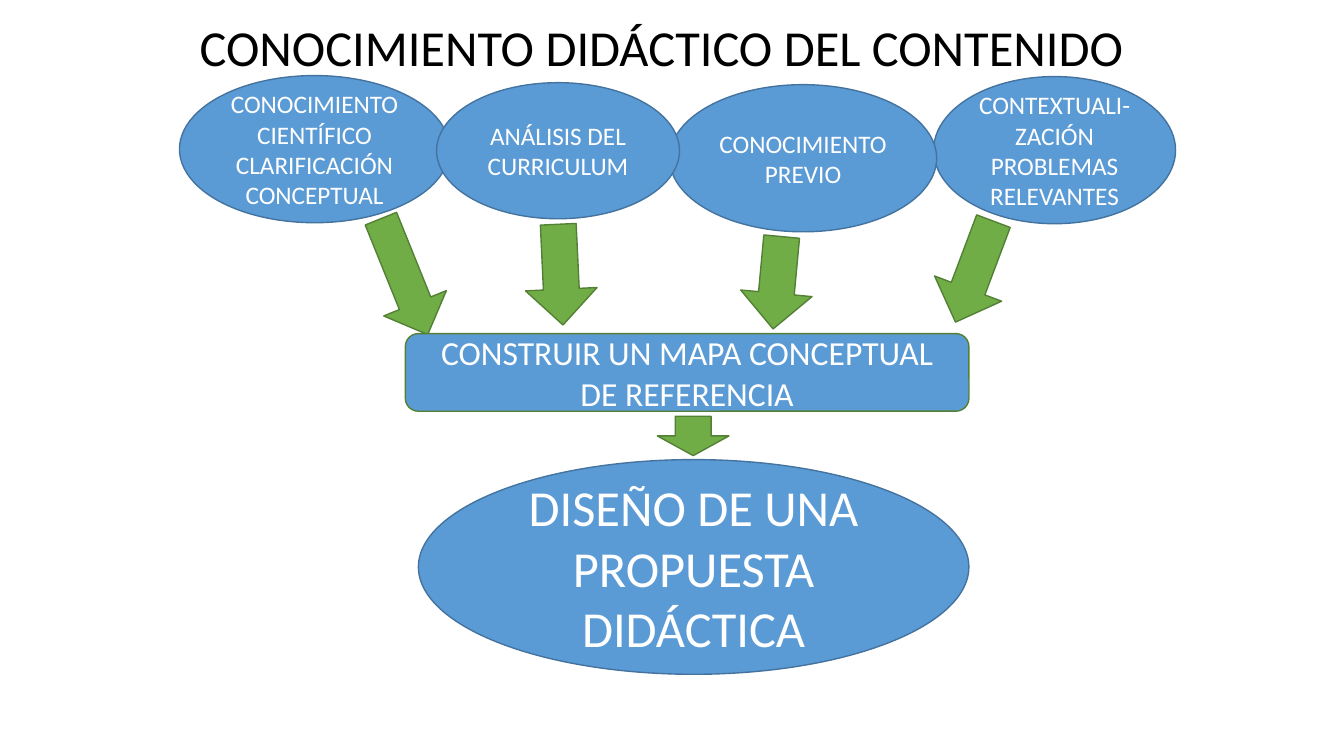
import pptx
import pptx.util
import pptx.dml.color
import pptx.enum.shapes
import pptx.enum.text

PX = 9144  # 100 px to the inch
FONT = "Calibri"
HUES = {
    "blue": "5B9BD5", "navy": "43739E",
    "green": "70AD47", "moss": "538035",
    "white": "FFFFFF", "black": "000000",
}
KINDS = pptx.enum.shapes.MSO_SHAPE
ALIGN = pptx.enum.text.PP_ALIGN
MIDDLE = pptx.enum.text.MSO_ANCHOR.MIDDLE


class Board:
    def __init__(self, deck):
        # Layout with a title only
        self.slide = deck.slides.add_slide(deck.slide_layouts[5])

    def hue(self, name):
        return pptx.dml.color.RGBColor.from_string(HUES[name])

    def label(self, shape, lines, size, hue, align):
        frame = shape.text_frame
        frame.word_wrap = True
        frame.auto_size = pptx.enum.text.MSO_AUTO_SIZE.NONE
        frame.vertical_anchor = MIDDLE
        for i, line in enumerate(lines):
            para = frame.add_paragraph() if i else frame.paragraphs[0]
            para.alignment = align
            run = para.add_run()
            run.text = line
            run.font.name = FONT
            run.font.size = pptx.util.Pt(size)
            run.font.color.rgb = self.hue(hue)

    def title(self, box, text, size):
        shape = self.slide.shapes.title
        shape.left, shape.top, shape.width, shape.height = (n * PX for n in box)
        self.label(shape, [text], size, "black", ALIGN.LEFT)
        shape.text_frame.paragraphs[0].line_spacing = 0.9

    def form(self, kind, box, fill, edge):
        shape = self.slide.shapes.add_shape(kind, *(n * PX for n in box))
        shape.shadow.inherit = False
        shape.fill.solid()
        shape.fill.fore_color.rgb = self.hue(fill)
        shape.line.color.rgb = self.hue(edge)
        shape.line.width = pptx.util.Pt(1)
        return shape

    def oval(self, box, lines, size):
        shape = self.form(KINDS.OVAL, box, "blue", "navy")
        self.label(shape, lines, size, "white", ALIGN.CENTER)

    def panel(self, box, text, size):
        shape = self.form(KINDS.ROUNDED_RECTANGLE, box, "blue", "moss")
        self.label(shape, [text], size, "white", ALIGN.CENTER)

    def arrow(self, box, turn):
        self.form(KINDS.RIGHT_ARROW, box, "green", "moss").rotation = turn


def main():
    deck = pptx.Presentation()
    deck.slide_width, deck.slide_height = 1333 * PX, 750 * PX
    board = Board(deck)

    # Title
    board.title((188, 7, 953, 85), "CONOCIMIENTO DIDÁCTICO DEL CONTENIDO", 36)

    # Sources of knowledge, from back to front
    for box, lines in (
        ((178, 75, 268, 146),
         ["CONOCIMIENTO", "CIENTÍFICO", "CLARIFICACIÓN CONCEPTUAL"]),
        ((926, 76, 240, 146), ["CONTEXTUALI-ZACIÓN PROBLEMAS RELEVANTES"]),
        ((664, 84, 265, 146), ["CONOCIMIENTO", "PREVIO"]),
        ((433, 82, 241, 135), ["ANÁLISIS DEL CURRICULUM"]),
    ):
        board.oval(box, lines, 18)

    # Arrows down to the concept map
    for box, turn in (
        ((339, 241, 124, 67), 68),
        ((506, 237, 100, 71), 87.3),
        ((913, 234, 107, 71), 110.6),
        ((725, 245, 92, 71), 95.3),
    ):
        board.arrow(box, turn)

    # Concept map and the resulting proposal
    board.oval((415, 456, 546, 213), ["DISEÑO DE UNA PROPUESTA DIDÁCTICA"], 36)
    board.panel((402, 331, 559, 77),
                "CONSTRUIR UN MAPA CONCEPTUAL DE REFERENCIA", 24)
    board.arrow((668, 397, 39, 71), 90)

    deck.save("out.pptx")


if __name__ == "__main__":
    main()
